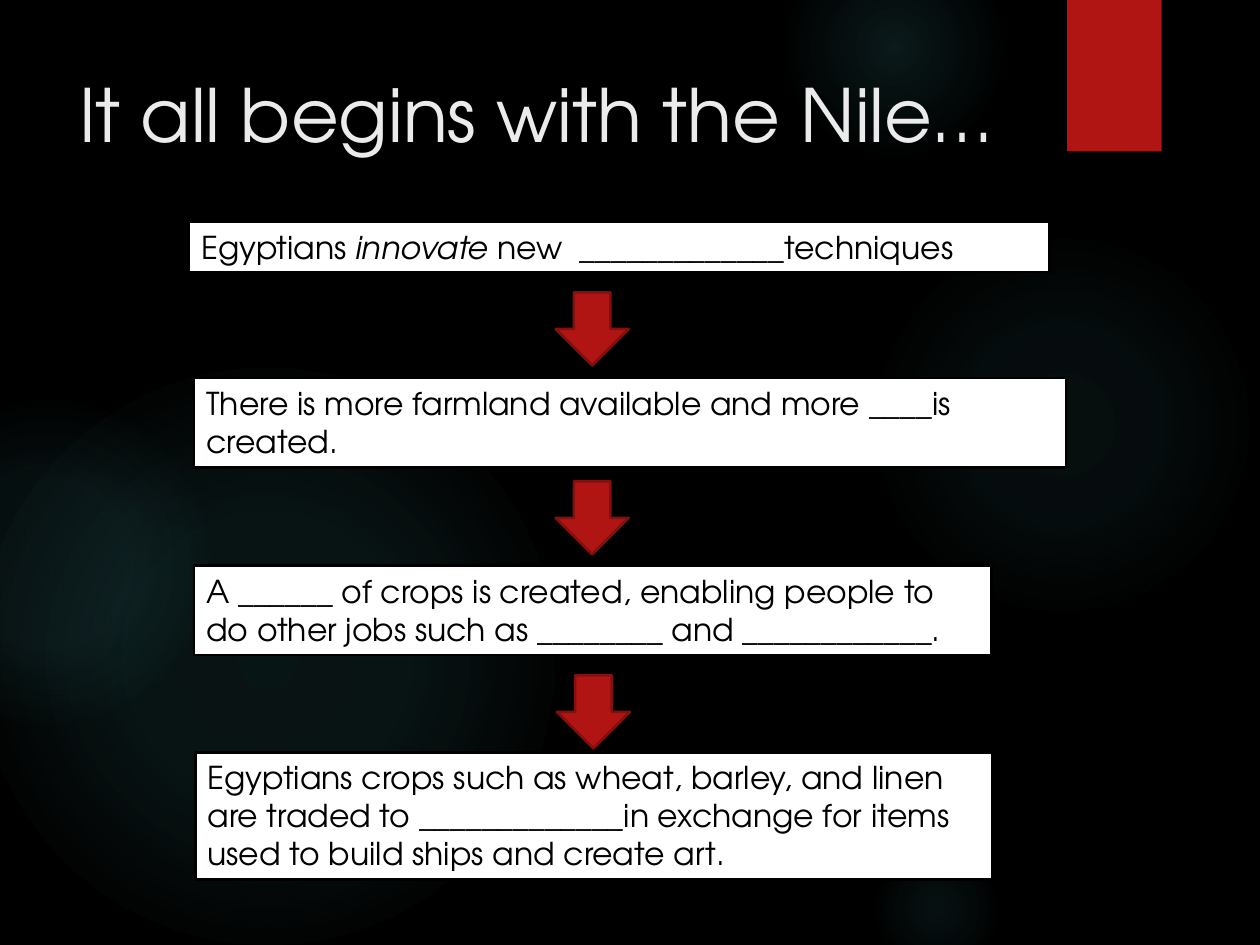
from pptx import Presentation
from pptx.dml.color import RGBColor
from pptx.enum.shapes import MSO_SHAPE
from pptx.enum.text import MSO_ANCHOR, MSO_AUTO_SIZE, PP_ALIGN
from pptx.oxml import parse_xml
from pptx.oxml.ns import nsdecls
from pptx.util import Inches, Pt

RECTANGLE = MSO_SHAPE.RECTANGLE
ELLIPSE = MSO_SHAPE.OVAL
DOWN_ARROW = MSO_SHAPE.DOWN_ARROW
TOP = MSO_ANCHOR.TOP
LEFT = PP_ALIGN.LEFT
FIT_SHAPE = MSO_AUTO_SIZE.SHAPE_TO_FIT_TEXT

THEME = {
    "font": "TeX Gyre Adventor",
    "title_size": 42,
    "body_size": 18,
    "outline": 1.5,
    "background": "000000",
    "title": "EBEBEB",
    "glow": "50B9C1",
    "accent": "B01513",
    "accent_edge": "82100E",
    "box": "FFFFFF",
    "ink": "000000",
}

TITLE = "It all begins with the Nile…"
TITLE_AREA = (0.53, 0.5, 7.72, 1.53)
TAB_AREA = (8.47, 0, 0.75, 1.2)

GLOWS = [
    (6.89, 1.83, 3.08, ((0, 7), (36, 6), (69, 0))),
    (6.22, -0.5, 1.75, ((0, 14), (36, 7), (73, 0))),
    (6.89, 6.67, 1.08, ((0, 9), (36, 5), (66, 0))),
    (-0.17, 2.92, 4.58, ((0, 11), (36, 10), (75, 0))),
    (-0.92, 3.17, 2.58, ((0, 8), (36, 8), (72, 0))),
]

STEPS = [
    ((1.5, 1.76, 6.83), [[("Egyptians ", False), ("innovate", True),
                          (" new  _____________techniques", False)]]),
    ((1.54, 3, 6.92), [[("There is more farmland available and more ____is", False)],
                       [("created.", False)]]),
    ((1.54, 4.49, 6.33), [[("A ______ of crops is created, enabling people to do other jobs "
                            "such as ________ and ____________.", False)]]),
    ((1.55, 5.97, 6.33), [[("Egyptians crops such as wheat, barley, and linen are traded to "
                            "_____________in exchange for items used to build ships and "
                            "create art.", False)]]),
]
BOX_HEIGHTS = (0.4, 0.71, 0.71, 1.01)
ARROW_SIZE = 0.58
ARROWS = [(4.41, 2.32), (4.41, 3.82), (4.42, 5.36)]


def color(name):
    return RGBColor.from_string(THEME[name])


def add_shape(slide, kind, area, fill=None, edge=None):
    shape = slide.shapes.add_shape(kind, *map(Inches, area))
    shape.shadow.inherit = False
    if fill:
        shape.fill.solid()
        shape.fill.fore_color.rgb = color(fill)
    if edge:
        shape.line.color.rgb = color(edge)
        shape.line.width = Pt(THEME["outline"])
    else:
        shape.line.fill.background()
    return shape


def style_paragraph(paragraph, size, ink):
    paragraph.alignment = LEFT
    paragraph.font.name = THEME["font"]
    paragraph.font.size = Pt(THEME[size])
    paragraph.font.color.rgb = color(ink)


def add_glow(slide, left, top, diameter, stops):
    shape = add_shape(slide, ELLIPSE, (left, top, diameter, diameter))
    stop_xml = "".join(
        f'<a:gs pos="{position * 1000}"><a:srgbClr val="{THEME["glow"]}">'
        f'<a:alpha val="{opacity * 1000}"/></a:srgbClr></a:gs>'
        for position, opacity in stops
    )
    gradient = parse_xml(
        f'<a:gradFill {nsdecls("a")} rotWithShape="1"><a:gsLst>{stop_xml}</a:gsLst>'
        '<a:path path="circle"><a:fillToRect l="50000" t="50000" r="50000" b="50000"/>'
        '</a:path></a:gradFill>'
    )
    shape.element.spPr.insert(2, gradient)


def add_title(slide):
    frame = slide.shapes.add_textbox(*map(Inches, TITLE_AREA)).text_frame
    frame.word_wrap = True
    frame.vertical_anchor = TOP
    frame.text = TITLE
    style_paragraph(frame.paragraphs[0], "title_size", "title")


def add_step(slide, area, paragraphs):
    frame = add_shape(slide, RECTANGLE, area, "box", "ink").text_frame
    frame.word_wrap = True
    frame.vertical_anchor = TOP
    frame.auto_size = FIT_SHAPE
    for index, runs in enumerate(paragraphs):
        paragraph = frame.add_paragraph() if index else frame.paragraphs[0]
        style_paragraph(paragraph, "body_size", "ink")
        for text, italic in runs:
            run = paragraph.add_run()
            run.text = text
            if italic:
                run.font.italic = True


def main():
    presentation = Presentation()
    presentation.slide_width = Inches(10)
    presentation.slide_height = Inches(7.5)
    slide = presentation.slides.add_slide(presentation.slide_layouts[6])
    slide.background.fill.solid()
    slide.background.fill.fore_color.rgb = color("background")

    for glow in GLOWS:
        add_glow(slide, *glow)
    add_shape(slide, RECTANGLE, TAB_AREA, "accent")
    add_title(slide)
    for (position, paragraphs), height in zip(STEPS, BOX_HEIGHTS):
        add_step(slide, (*position, height), paragraphs)
    for position in ARROWS:
        add_shape(slide, DOWN_ARROW, (*position, ARROW_SIZE, ARROW_SIZE), "accent", "accent_edge")

    presentation.save("out.pptx")


if __name__ == "__main__":
    main()
